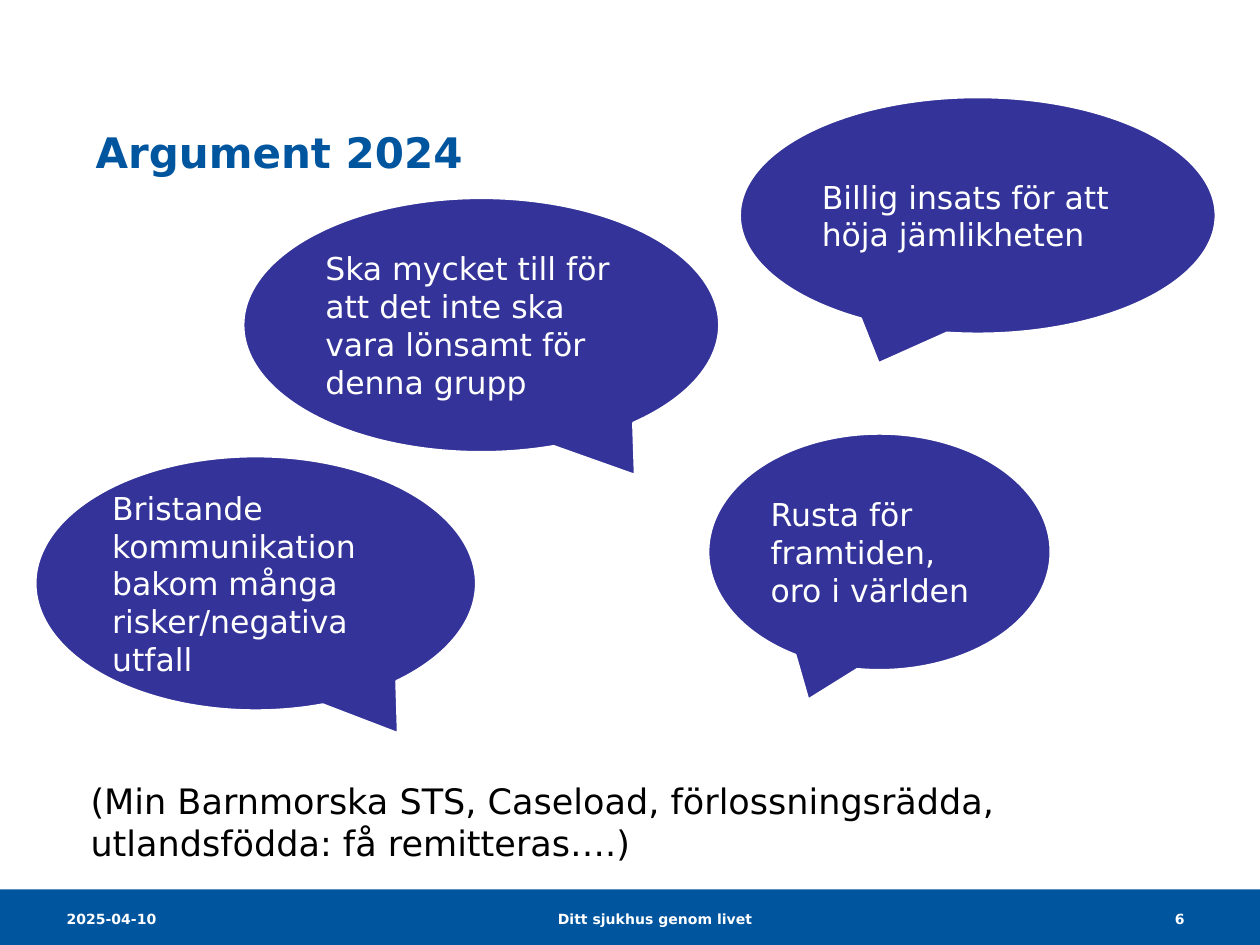
from pptx import Presentation
from pptx.dml.color import RGBColor
from pptx.enum import shapes, text
from pptx.util import Inches, Pt

BLUE = RGBColor(0x00, 0x55, 0x9F)
INDIGO = RGBColor(0x33, 0x33, 0x99)
WHITE = RGBColor(0xFF, 0xFF, 0xFF)
BLACK = RGBColor(0x00, 0x00, 0x00)
FONT = "DejaVu Sans"
LEFT, MID, RIGHT = text.PP_ALIGN.LEFT, text.PP_ALIGN.CENTER, text.PP_ALIGN.RIGHT
TOP, CENTER = text.MSO_ANCHOR.TOP, text.MSO_ANCHOR.MIDDLE
TAIL = (0.323, 0.59)

BUBBLES = [
    ((5.87, 0.77, 3.78, 1.88), None, "Billig insats för att höja jämlikheten"),
    ((1.93, 1.57, 3.78, 2.02), TAIL,
     "Ska mycket till för att det inte ska vara lönsamt för denna grupp"),
    ((0.28, 3.62, 3.5, 2.02), TAIL,
     "Bristande kommunikation bakom många risker/negativa utfall"),
    ((5.62, 3.44, 2.72, 1.88), None, "Rusta för framtiden, oro i världen"),
]


def inch(box):
    return [Inches(v) for v in box]


def write(shape, words, size=18, color=WHITE, bold=False, align=LEFT, anchor=TOP):
    frame = shape.text_frame
    frame.word_wrap = True
    frame.auto_size = text.MSO_AUTO_SIZE.NONE
    frame.vertical_anchor = anchor
    para = frame.paragraphs[0]
    para.alignment = align
    run = para.add_run()
    run.text = words
    font = run.font
    font.name, font.size, font.bold = FONT, Pt(size), bold
    font.color.rgb = color


def label(slide, box, words, **style):
    write(slide.shapes.add_textbox(*inch(box)), words, **style)


def solid(slide, kind, box, color):
    shape = slide.shapes.add_shape(kind, *inch(box))
    shape.shadow.inherit = False
    shape.fill.solid()
    shape.fill.fore_color.rgb = color
    shape.line.fill.background()
    return shape


def footer(slide, box):
    x, y, w, h = box
    solid(slide, shapes.MSO_SHAPE.RECTANGLE, box, BLUE)
    for left, width, words, align in [
        (0.43, 2.33, "2025-04-10", LEFT),
        (3.98, 2.44, "Ditt sjukhus genom livet", MID),
        (7.91, 1.59, "6", RIGHT),
    ]:
        label(slide, (x + left, y + 0.12, width, 0.23), words,
              size=8, bold=True, align=align)


def heading(slide, box, words):
    title = slide.shapes.title
    title.left, title.top, title.width, title.height = inch(box)
    write(title, words, size=24, color=BLUE, bold=True, anchor=CENTER)


def bubble(slide, box, tail, words):
    shape = solid(slide, shapes.MSO_SHAPE.OVAL_CALLOUT, box, INDIGO)
    shape.line.color.rgb = WHITE
    shape.line.width = Pt(1.5)
    if tail:
        shape.adjustments[0], shape.adjustments[1] = tail
    write(shape, words, anchor=CENTER)


def main():
    deck = Presentation()
    deck.slide_width, deck.slide_height = Inches(10), Inches(7.5)
    slide = deck.slides.add_slide(deck.slide_layouts[5])
    footer(slide, (0, 7.06, 10, 0.44))
    heading(slide, (0.66, 0.77, 8.68, 0.87), "Argument 2024")
    label(slide, (0.62, 6.14, 8.71, 0.77),
          "(Min Barnmorska STS, Caseload, förlossningsrädda, "
          "utlandsfödda: få remitteras….)", size=20, color=BLACK)
    for box, tail, words in BUBBLES:
        bubble(slide, box, tail, words)
    deck.save("out.pptx")


if __name__ == "__main__":
    main()
